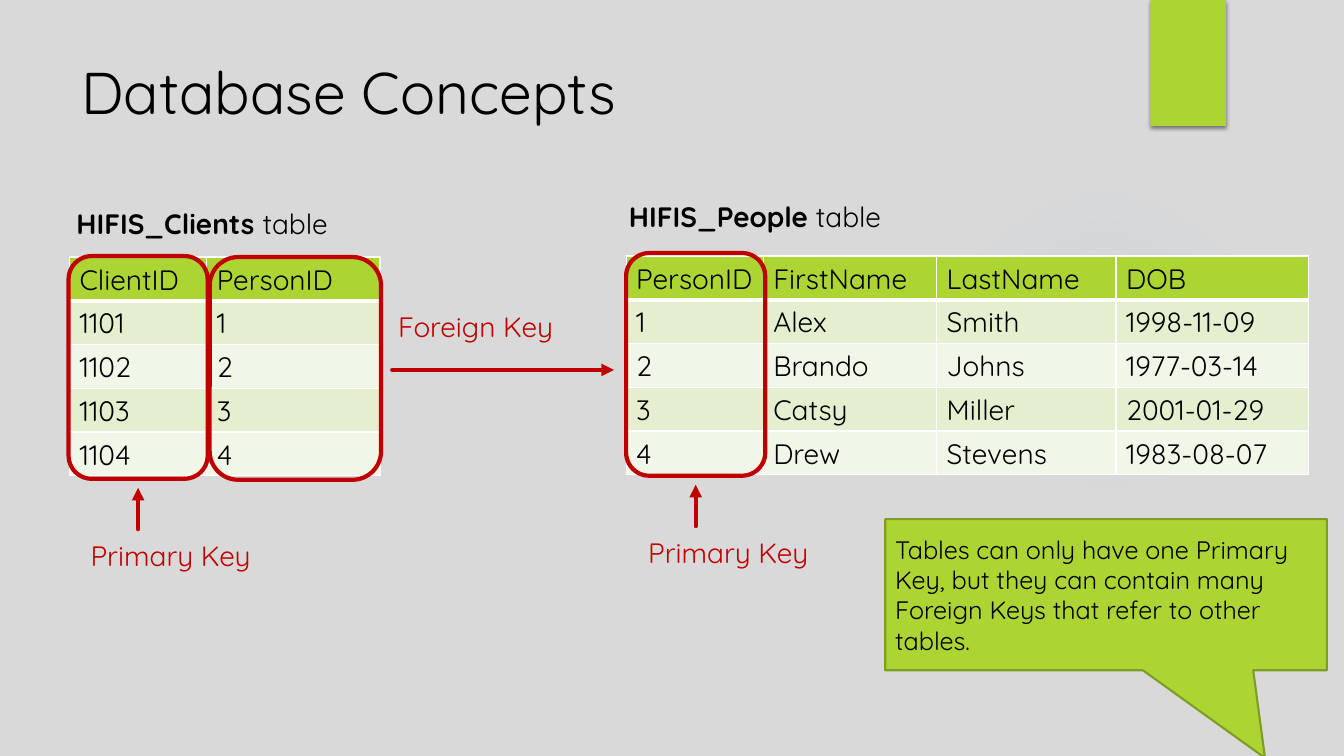
"""Build the Database Concepts slide on primary and foreign keys."""
from dataclasses import dataclass

from lxml import etree
from pptx import Presentation
from pptx.dml.color import RGBColor
from pptx.enum.shapes import MSO_CONNECTOR, MSO_SHAPE
from pptx.enum.text import MSO_ANCHOR, PP_ALIGN
from pptx.oxml import parse_xml
from pptx.oxml.ns import nsdecls, qn
from pptx.util import Inches, Pt

STRAIGHT = MSO_CONNECTOR.STRAIGHT
RECTANGLE, ROUNDED = MSO_SHAPE.RECTANGLE, MSO_SHAPE.ROUNDED_RECTANGLE
OVAL, CALLOUT = MSO_SHAPE.OVAL, MSO_SHAPE.RECTANGULAR_CALLOUT
TOP, MIDDLE, LEFT = MSO_ANCHOR.TOP, MSO_ANCHOR.MIDDLE, PP_ALIGN.LEFT

FONT = "Quicksand"
CELL = Inches(0.1)
ROW_HEIGHT = 4.34
COLORS = {
    "background": "D9D9D9", "green": "ACD433", "outline": "7F9D26",
    "band": "E3EFCE", "plain": "F1F7E8", "key": "C00000",
    "text": "000000", "border": "FFFFFF", "glow": "7AC4F0",
}


@dataclass(frozen=True)
class Area:
    """A rectangle in grid columns and rows."""
    column: float
    row: float
    columns: float
    rows: float

    def box(self) -> list[int]:
        return [round(n * CELL) for n in (self.column, self.row, self.columns, self.rows)]


@dataclass(frozen=True)
class DataTable:
    name: str
    caption: Area
    column: float
    row: float
    widths: tuple[float, ...]
    records: tuple[tuple[str, ...], ...]
    bottom_margin: float


@dataclass(frozen=True)
class Key:
    name: str
    frame: Area
    label: Area
    start: tuple[float, float]
    end: tuple[float, float]


def primary_key(column: float, row: float) -> Key:
    middle = column + 6.9
    return Key("Primary Key", Area(column, row, 13.8, 22.1),
               Area(column + 1.2, row + 27.5, 18.6, 4.4),
               (middle, row + 27.1), (middle, row + 23))


TABLES = (
    DataTable("HIFIS_People", Area(61.4, 19.3, 32.3, 6.1), 62.1, 25.4,
              (13.6, 17.2, 17.8, 19.1), (
                  ("PersonID", "FirstName", "LastName", "DOB"),
                  ("1", "Alex", "Smith", "1998-11-09"),
                  ("2", "Brando", "Johns", "1977-03-14"),
                  ("3", "Catsy", "Miller", "2001-01-29"),
                  ("4", "Drew", "Stevens", "1983-08-07")), 0.5),
    DataTable("HIFIS_Clients", Area(6.6, 20, 32.3, 6.1), 6.9, 25.5,
              (13.6, 17.2), (
                  ("ClientID", "PersonID"), ("1101", "1"), ("1102", "2"),
                  ("1103", "3"), ("1104", "4")), 0.37),
)
KEYS = (
    primary_key(62.1, 25.1),
    primary_key(6.8, 25.4),
    Key("Foreign Key", Area(20.8, 25.5, 17, 22.1), Area(38.5, 30.2, 18.6, 4.4),
        (38.9, 36.7), (60.9, 36.7)),
)


def rgb(color: str) -> RGBColor:
    return RGBColor.from_string(COLORS[color])


def write(frame, text: str, *, size: float = 20, color: str = "text",
          lead: str = "", anchor=TOP) -> None:
    frame.word_wrap = True
    frame.vertical_anchor = anchor
    paragraph = frame.paragraphs[0]
    paragraph.alignment = LEFT
    for words, bold in ((lead, True), (text, False)):
        if words:
            run = paragraph.add_run()
            run.text = words
            run.font.name, run.font.size, run.font.bold = FONT, Pt(size), bold
            run.font.color.rgb = rgb(color)


def add_text(slide, area: Area, text: str, **style) -> None:
    write(slide.shapes.add_textbox(*area.box()).text_frame, text, **style)


def add_block(slide, kind, area: Area, fill: str = "", line: str = "", width: float = 0):
    block = slide.shapes.add_shape(kind, *area.box())
    block.shadow.inherit = False
    if fill:
        block.fill.solid()
        block.fill.fore_color.rgb = rgb(fill)
    else:
        block.fill.background()
    if line:
        block.line.color.rgb = rgb(line)
        block.line.width = Pt(width)
    else:
        block.line.fill.background()
    return block


def add_backdrop(slide) -> None:
    glow = add_block(slide, OVAL, Area(94.1, 18.3, 30.8, 30.8))
    stops = "".join(
        f'<a:gs pos="{place * 1000}"><a:srgbClr val="{COLORS["glow"]}">'
        f'<a:alpha val="{alpha * 1000}"/></a:srgbClr></a:gs>'
        for place, alpha in ((0, 7), (36, 6), (69, 0)))
    gradient = parse_xml(
        f'<a:gradFill {nsdecls("a")}><a:gsLst>{stops}</a:gsLst><a:path path="circle">'
        '<a:fillToRect l="50000" t="50000" r="50000" b="50000"/></a:path></a:gradFill>')
    properties = glow.element.spPr
    properties.replace(properties.find(qn("a:noFill")), gradient)

    ribbon = add_block(slide, RECTANGLE, Area(114.1, 0, 7.5, 12.5), "green")
    ribbon.element.spPr.find(qn("a:effectLst")).append(parse_xml(
        f'<a:outerShdw {nsdecls("a")} blurRad="{Pt(3)}" dist="{Pt(2)}" dir="5400000" '
        f'rotWithShape="0"><a:srgbClr val="{COLORS["text"]}"><a:alpha val="45000"/>'
        '</a:srgbClr></a:outerShdw>'))


def style_cell(cell, fill: str, bottom_width: float) -> None:
    properties = cell._tc.get_or_add_tcPr()
    for side, width in (("L", 1), ("R", 1), ("T", 1), ("B", bottom_width)):
        properties.append(parse_xml(
            f'<a:ln{side} {nsdecls("a")} w="{Pt(width)}"><a:solidFill>'
            f'<a:srgbClr val="{COLORS["border"]}"/></a:solidFill></a:ln{side}>'))
    cell.fill.solid()
    cell.fill.fore_color.rgb = rgb(fill)


def add_data_table(slide, data: DataTable) -> None:
    add_text(slide, data.caption, "table", lead=data.name + " ")
    count = len(data.records)
    area = Area(data.column, data.row, sum(data.widths), ROW_HEIGHT * count)
    table = slide.shapes.add_table(count, len(data.widths), *area.box()).table
    table.first_row = table.horz_banding = False
    for column, width in zip(table.columns, data.widths):
        column.width = round(width * CELL)
    for index, record in enumerate(data.records):
        fill = "green" if index == 0 else "band" if index % 2 else "plain"
        for cell, value in zip(table.rows[index].cells, record):
            style_cell(cell, fill, 1 if index else 3)
            cell.margin_bottom = round(data.bottom_margin * CELL)
            write(cell.text_frame, value)


def add_key(slide, key: Key) -> None:
    add_block(slide, ROUNDED, key.frame, line="key", width=3)
    add_text(slide, key.label, key.name, color="key")
    ends = [round(n * CELL) for n in key.start + key.end]
    arrow = slide.shapes.add_connector(STRAIGHT, *ends)
    arrow.line.color.rgb = rgb("key")
    arrow.line.width = Pt(3)
    stroke = arrow.line._get_or_add_ln()
    stroke.set("cap", "rnd")
    etree.SubElement(stroke, qn("a:tailEnd"), type="triangle")
    etree.SubElement(arrow.element.spPr, qn("a:effectLst"))


def main() -> None:
    deck = Presentation()
    deck.slide_width, deck.slide_height = Inches(13.33), Inches(7.5)
    slide = deck.slides.add_slide(deck.slide_layouts[5])
    slide.background.fill.solid()
    slide.background.fill.fore_color.rgb = rgb("background")
    add_backdrop(slide)
    title = slide.shapes.title
    title.left, title.top, title.width, title.height = Area(7.1, 5, 102.9, 15.3).box()
    write(title.text_frame, "Database Concepts", size=42)
    note = add_block(slide, CALLOUT, Area(87.8, 51.5, 43.8, 15), "green", "outline", 1.5)
    note.adjustments[0], note.adjustments[1] = 0.36, 1.08
    write(note.text_frame, "Tables can only have one Primary Key, but they can contain many "
          "Foreign Keys that refer to other tables.", size=18, anchor=MIDDLE)
    for data in TABLES:
        add_data_table(slide, data)
    for key in KEYS:
        add_key(slide, key)
    deck.save("out.pptx")


if __name__ == "__main__":
    main()
